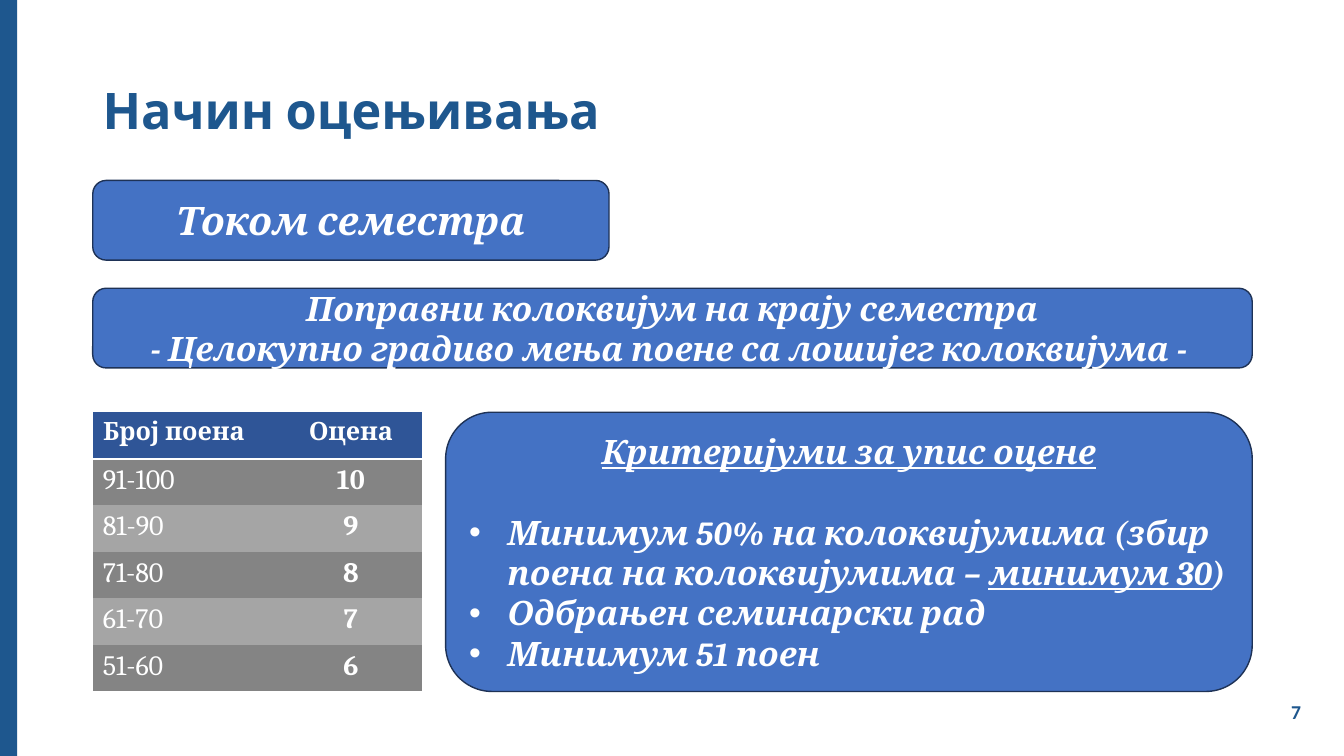
from lxml.etree import SubElement
from pptx import Presentation
from pptx.dml.color import RGBColor
from pptx.enum.shapes import MSO_SHAPE
from pptx.enum.text import MSO_ANCHOR, PP_ALIGN
from pptx.oxml import parse_xml
from pptx.oxml.ns import nsdecls, qn
from pptx.util import Inches, Pt

NAVY = "1E578E"
WHITE = "FFFFFF"
LEFT = 0.92
CONTENT_WIDTH = 11.5
LOWER_TOP = 4.09
LOWER_HEIGHT = 2.77
NO_STYLE_NO_GRID = "{2D5ABB26-0587-4C30-8999-92F81FD0307C}"
GRADES = [("91-100", "10"), ("81-90", "9"), ("71-80", "8"), ("61-70", "7"), ("51-60", "6")]


def color(value):
    return RGBColor.from_string(value)


def fill_solid(target, value):
    target.fill.solid()
    target.fill.fore_color.rgb = color(value)


def style(paragraph, name, size, value, bold=True, italic=False, align=PP_ALIGN.LEFT):
    paragraph.alignment = align
    font = paragraph.font
    font.name, font.size, font.bold, font.italic = name, Pt(size), bold, italic
    font.color.rgb = color(value)


def add_label(page, text, area, name, size, align):
    box = page.shapes.add_textbox(*map(Inches, area))
    frame = box.text_frame
    frame.word_wrap = True
    frame.vertical_anchor = MSO_ANCHOR.MIDDLE
    paragraph = frame.paragraphs[0]
    paragraph.text = text
    style(paragraph, name, size, NAVY, align=align)
    return paragraph


def add_panel(page, area, size, lines):
    panel = page.shapes.add_shape(MSO_SHAPE.ROUNDED_RECTANGLE, *map(Inches, area))
    panel.shadow.inherit = False
    fill_solid(panel, "4472C4")
    panel.line.color.rgb = color("1E3256")
    panel.line.width = Pt(1)
    frame = panel.text_frame
    frame.word_wrap = True
    frame.vertical_anchor = MSO_ANCHOR.MIDDLE
    frame.text = "\n".join(lines)
    for paragraph in frame.paragraphs:
        style(paragraph, "Cambria", size, WHITE, italic=True, align=PP_ALIGN.CENTER)
    return frame


def add_bullet(frame, size, pieces):
    paragraph = frame.add_paragraph()
    properties = paragraph._p.get_or_add_pPr()
    properties.set("marL", str(Inches(0.38)))
    properties.set("indent", str(Inches(-0.38)))
    SubElement(properties, qn("a:buFont"), typeface="Arial")
    SubElement(properties, qn("a:buChar"), char="•")
    for text, underlined in pieces:
        span = paragraph.add_run()
        span.text = text
        if underlined:
            span.font.underline = True
    style(paragraph, "Cambria", size, WHITE, italic=True)


def add_grade_table(page):
    rows = [("Број поена", "Оцена")] + GRADES
    area = (LEFT, LOWER_TOP, 3.27, LOWER_HEIGHT)
    table = page.shapes.add_table(len(rows), 2, *map(Inches, area)).table
    table._tbl.tblPr[0].text = NO_STYLE_NO_GRID
    for column, width in zip(table.columns, (1.85, 1.42)):
        column.width = Inches(width)
    for row, values in enumerate(rows):
        header = row == 0
        shade = "2F5597" if header else ("A5A5A5", "848484")[row % 2]
        for column, value in enumerate(values):
            cell = table.cell(row, column)
            cell.text = value
            fill_solid(cell, shade)
            style(cell.text_frame.paragraphs[0], "Cambria", 18 if header else 20, WHITE,
                  bold=header or column == 1,
                  align=PP_ALIGN.CENTER if column else PP_ALIGN.LEFT)
            if header:
                add_bottom_border(cell, WHITE, 2)


def add_bottom_border(cell, value, width):
    border = parse_xml(
        f'<a:lnB {nsdecls("a")} w="{Pt(width)}"><a:solidFill>'
        f'<a:srgbClr val="{value}"/></a:solidFill></a:lnB>'
    )
    cell._tc.get_or_add_tcPr().insert(0, border)


def add_side_band(page, height):
    band = page.shapes.add_shape(MSO_SHAPE.RECTANGLE, 0, 0, Inches(0.17), height)
    band.shadow.inherit = False
    fill_solid(band, NAVY)
    band.line.fill.background()


def add_criteria(page):
    area = (4.42, LOWER_TOP, 8, LOWER_HEIGHT)
    frame = add_panel(page, area, 24, ["Критеријуми за упис оцене"])
    heading = frame.paragraphs[0]
    heading.font.underline = True
    heading.space_after = Pt(29)
    add_bullet(frame, 24, [
        ("Минимум 50% на колоквијумима (збир поена на колоквијумима – ", False),
        ("минимум 30", True),
        (")", False),
    ])
    for text in ("Одбрањен семинарски рад", "Минимум 51 поен"):
        add_bullet(frame, 24, [(text, False)])


def main():
    deck = Presentation()
    deck.slide_width, deck.slide_height = Inches(13.33), Inches(7.5)
    page = deck.slides.add_slide(deck.slide_layouts[6])
    add_side_band(page, deck.slide_height)
    add_label(page, "7", (12.6, 6.86, 0.51, 0.4), "Calibri", 14, PP_ALIGN.CENTER)
    title = add_label(page, "Начин оцењивања", (LEFT, 0.4, CONTENT_WIDTH, 1.45),
                      "Cabin", 36, PP_ALIGN.LEFT)
    title.line_spacing = 0.9
    add_grade_table(page)
    add_panel(page, (LEFT, 1.79, 5.12, 0.79), 28, ["Током семестра"])
    add_panel(page, (LEFT, 2.86, CONTENT_WIDTH, 0.79), 24, [
        "Поправни колоквијум на крају семестра",
        "- Целокупно градиво мења поене са лошијег колоквијума - ",
    ])
    add_criteria(page)
    deck.save("out.pptx")


if __name__ == "__main__":
    main()
